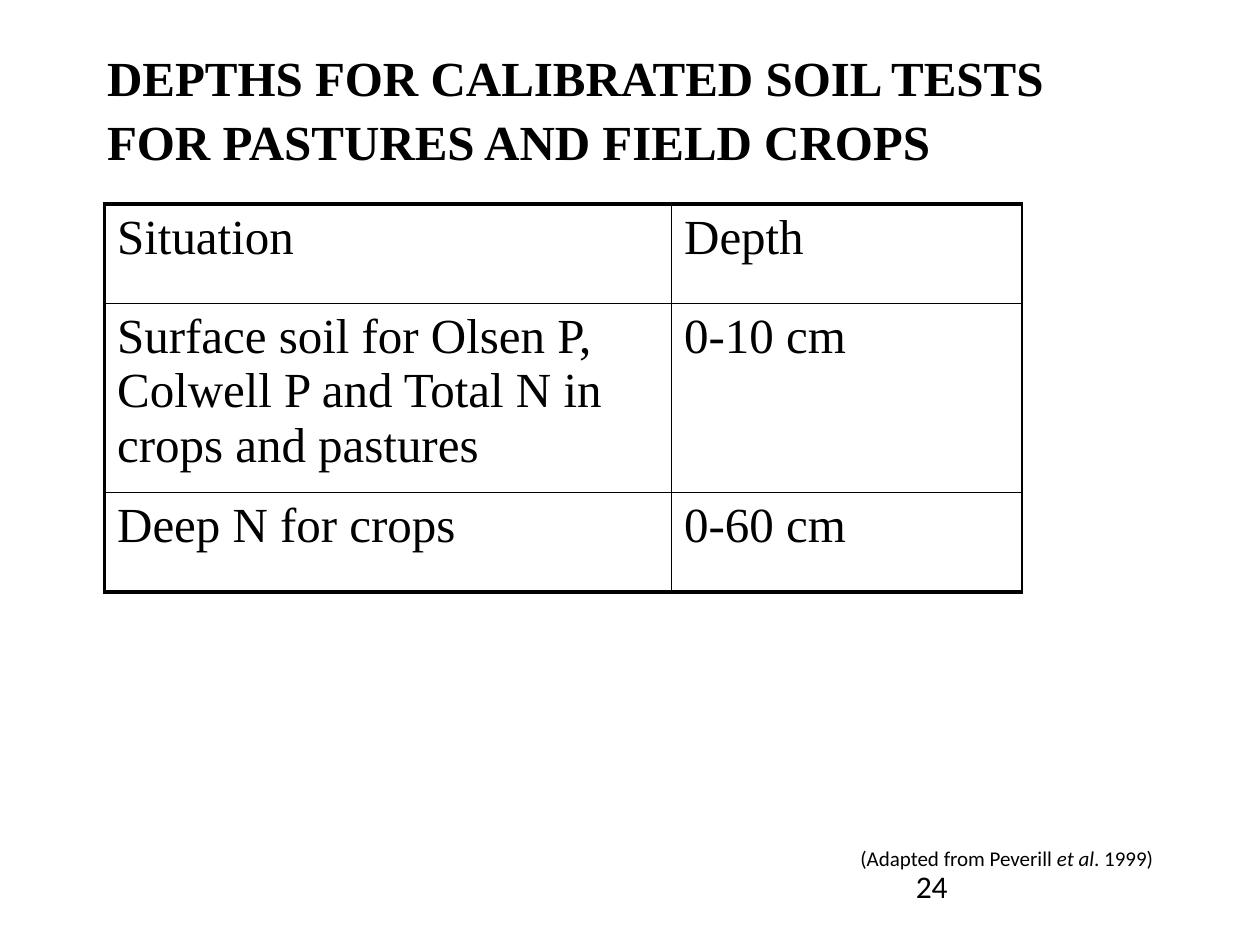
import pptx
import pptx.util
import pptx.dml.color
import pptx.enum.text
import pptx.oxml.ns
import lxml.etree
from dataclasses import dataclass

Inches = pptx.util.Inches
Pt = pptx.util.Pt
ANCHOR = pptx.enum.text.MSO_ANCHOR
ALIGN = pptx.enum.text.PP_ALIGN


@dataclass(frozen=True)
class Theme:
    ink: str = "000000"
    serif: str = "Times New Roman"
    sans: str = "Calibri"
    head: int = 28
    page: int = 18
    note: int = 12
    thick: float = 2.25
    thin: float = 1


def write(par, text, font, size, color, bold=False, italic=False):
    """Add one formatted run to a paragraph."""
    run = par.add_run()
    run.text = text
    run.font.name = font
    run.font.size = Pt(size)
    run.font.bold = bold
    run.font.italic = italic
    run.font.color.rgb = pptx.dml.color.RGBColor.from_string(color)


def border(cell, side, width, color):
    """Draw one edge (L, R, T or B) of a table cell."""
    qn = pptx.oxml.ns.qn
    props = cell._tc.get_or_add_tcPr()
    line = lxml.etree.SubElement(props, qn("a:ln" + side), w=str(Pt(width)))
    fill = lxml.etree.SubElement(line, qn("a:solidFill"))
    lxml.etree.SubElement(fill, qn("a:srgbClr"), val=color)


class Page:
    def __init__(self, deck, theme):
        self.theme = theme
        self.slide = deck.slides.add_slide(deck.slide_layouts[5])

    def title(self, text, left, top, width, height):
        t = self.theme
        box = self.slide.shapes.title
        box.left, box.top = Inches(left), Inches(top)
        box.width, box.height = Inches(width), Inches(height)
        box.text_frame.vertical_anchor = ANCHOR.MIDDLE
        par = box.text_frame.paragraphs[0]
        par.alignment = ALIGN.LEFT
        par.line_spacing = 1.08
        write(par, text, t.serif, t.head, t.ink, bold=True)

    def text(self, parts, size, left, top, width, height, wrap=True):
        """Place a text box; parts are (text, italic) pairs."""
        t = self.theme
        box = self.slide.shapes.add_textbox(
            Inches(left), Inches(top), Inches(width), Inches(height))
        box.text_frame.word_wrap = wrap
        for words, italic in parts:
            write(box.text_frame.paragraphs[0], words, t.sans, size, t.ink,
                  italic=italic)

    def table(self, data, left, top, cols, rows):
        t = self.theme
        grid = self.slide.shapes.add_table(
            len(rows), len(cols), Inches(left), Inches(top),
            Inches(sum(cols)), Inches(sum(rows))).table
        grid.first_row = grid.horz_banding = False
        for col, width in zip(grid.columns, cols):
            col.width = Inches(width)
        for row, height in zip(grid.rows, rows):
            row.height = Inches(height)
        for r, line in enumerate(data):
            for c, words in enumerate(line):
                cell = grid.cell(r, c)
                write(cell.text_frame.paragraphs[0], words, t.serif,
                      t.head, t.ink)
                # Thick outer edges, except on the right
                heavy = {"L": c == 0, "R": False, "T": r == 0,
                         "B": r == len(data) - 1}
                for side, bold in heavy.items():
                    border(cell, side, t.thick if bold else t.thin, t.ink)
                cell.fill.background()


def main():
    deck = pptx.Presentation()
    deck.slide_width, deck.slide_height = Inches(10), Inches(7.5)
    theme = Theme()
    page = Page(deck, theme)

    # Heading
    page.title("DEPTHS FOR CALIBRATED SOIL TESTS FOR PASTURES AND FIELD CROPS",
               0.75, 0.22, 8.5, 1.25)

    # Sampling depths
    page.table([
        ("Situation", "Depth"),
        ("Surface soil for Olsen P, Colwell P and Total N in crops and pastures",
         "0-10 cm"),
        ("Deep N for crops", "0-60 cm"),
    ], 0.83, 1.62, cols=(4.5, 2.78), rows=(0.79, 1.5, 0.79))

    # Source and page number
    page.text([("(Adapted from Peverill ", False), ("et al", True),
               (". 1999)", False)], theme.note, 6.73, 6.66, 2.56, 0.3,
              wrap=False)
    page.text([("24", False)], theme.page, 7.17, 6.83, 2.33, 0.52)

    deck.save("out.pptx")


if __name__ == "__main__":
    main()
